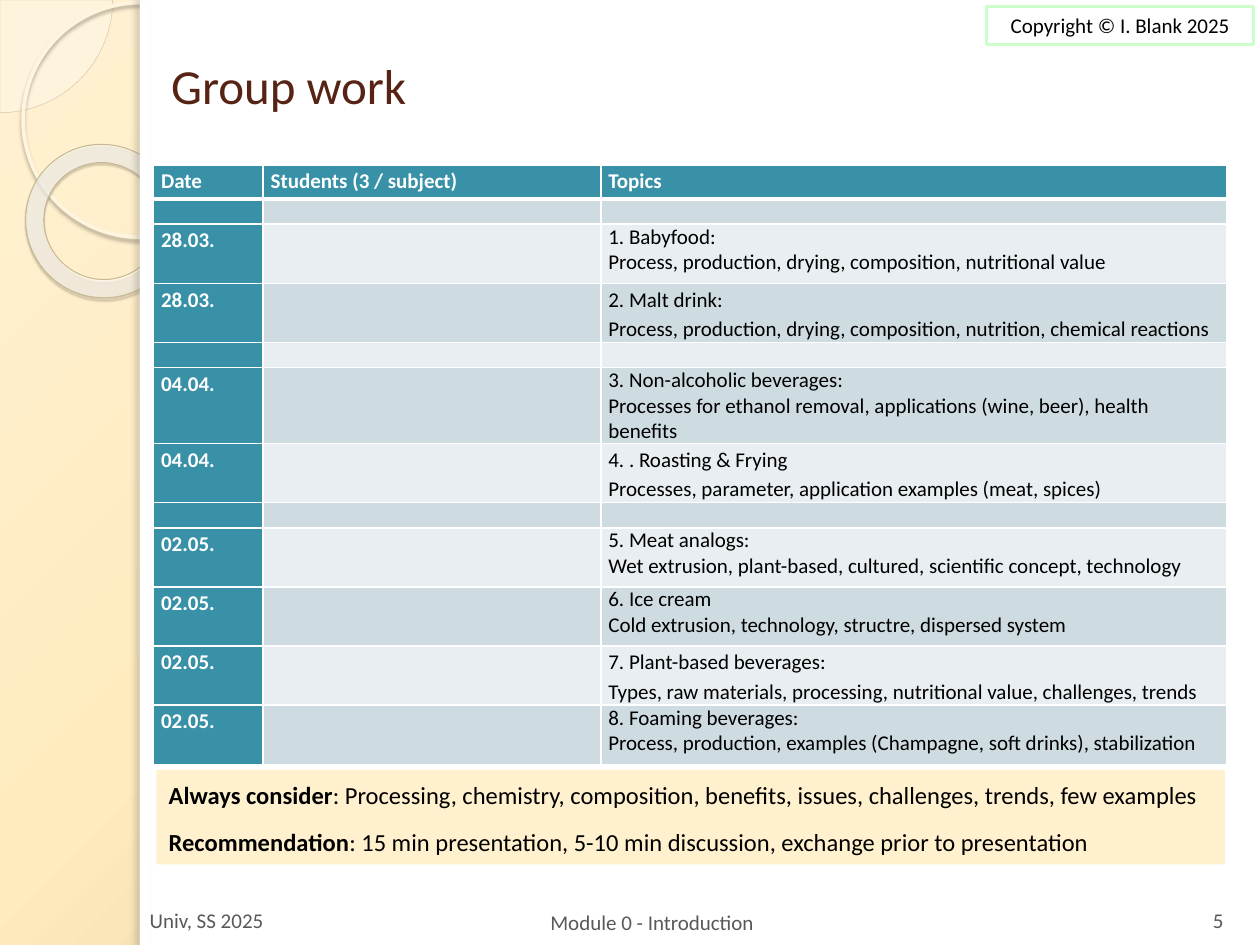
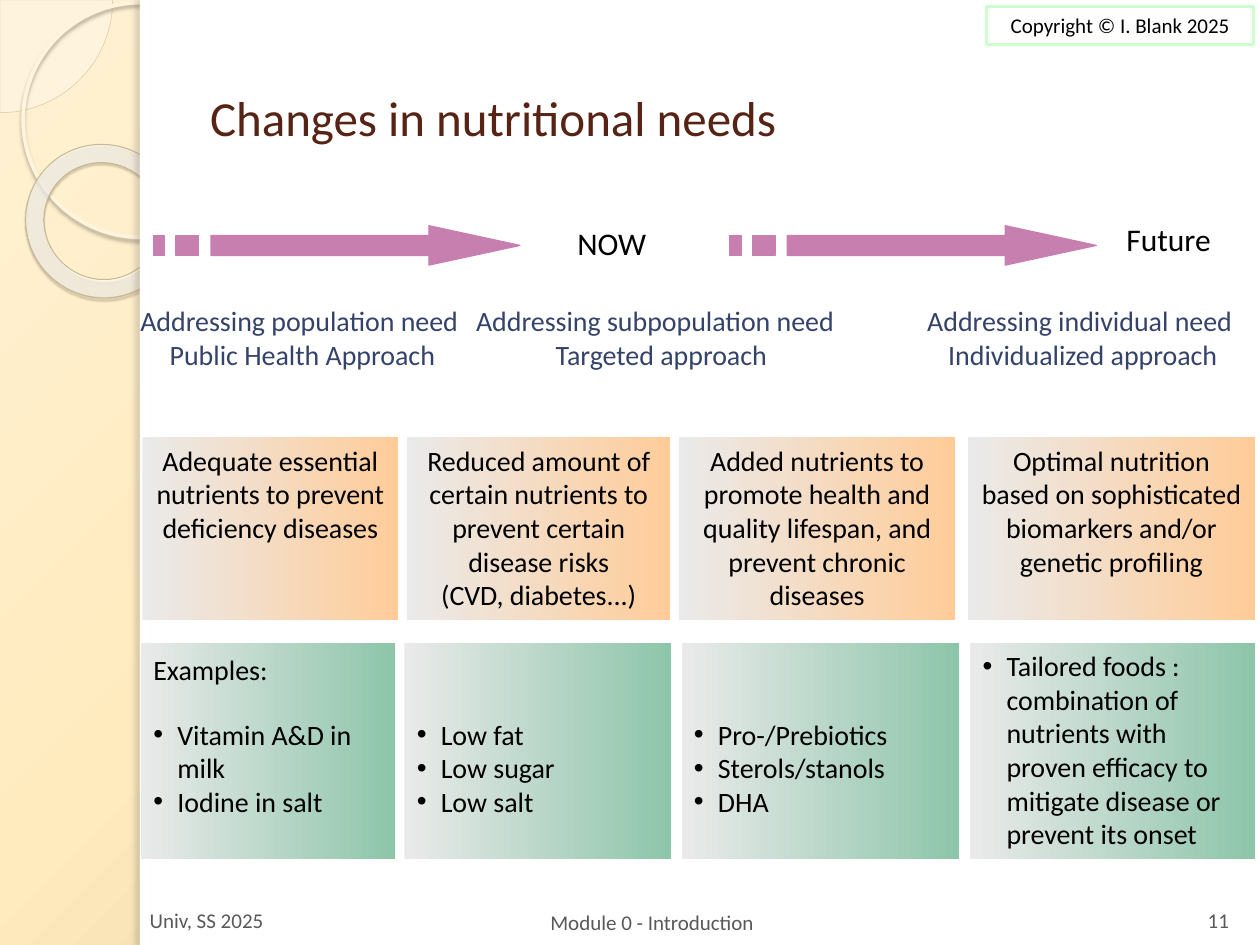
from lxml import etree
from pptx import Presentation
from pptx.dml.color import RGBColor
from pptx.enum.shapes import MSO_SHAPE as SHAPE
from pptx.enum.text import MSO_ANCHOR as ANCHOR, PP_ALIGN as ALIGN
from pptx.oxml.ns import qn
from pptx.util import Pt

FONT = "Calibri"
BLACK, WHITE, GREY = "000000", "FFFFFF", "595959"
TITLE_COLOR, APPROACH_COLOR, ARROW_COLOR = "572314", "35436A", "C77FAF"
TEAL, NOTE_FILL = "3891A7", "FFF1CE"
BANDS = ["CEDCE1", "E8EEF1"]
BACKGROUND = [(0, "FFF1D3", 100), (40, "FFEBBE", 100), (100, "C9B484", 100)]
RING = [(0, "FFFCF6", 70), (70, "FFFEFB", 55), (100, "F0D28E", 60)]
ORANGE = [(0, "EAEAEA", 100), (100, "FFCC99", 100)]
GREEN = [(0, "EAEAEA", 100), (100, "8DC5AA", 100)]

COPYRIGHT = "Copyright © I. Blank 2025"
TERM = "Univ, SS 2025"
MODULE = "Module 0 - Introduction"

HEADER = ("Date", "Students (3 / subject)", "Topics")
SINGLE, LOOSE = 1.0, 1.15
SCHEDULE = [
    None,
    ("28.03.", SINGLE, ["1. Babyfood:",
                        "Process, production, drying, composition, nutritional value"]),
    ("28.03.", LOOSE, ["2. Malt drink:",
                       "Process, production, drying, composition, nutrition, chemical reactions"]),
    None,
    ("04.04.", SINGLE, ["3. Non-alcoholic beverages:",
                        "Processes for ethanol removal, applications (wine, beer), health benefits"]),
    ("04.04.", LOOSE, ["4. . Roasting & Frying",
                       "Processes, parameter, application examples (meat, spices)"]),
    None,
    ("02.05.", SINGLE, ["5. Meat analogs:",
                        "Wet extrusion, plant-based, cultured, scientific concept, technology"]),
    ("02.05.", SINGLE, ["6. Ice cream",
                        "Cold extrusion, technology, structre, dispersed system"]),
    ("02.05.", LOOSE, ["7. Plant-based beverages:",
                       "Types, raw materials, processing, nutritional value, challenges, trends"]),
    ("02.05.", SINGLE, ["8. Foaming beverages:",
                        "Process, production, examples (Champagne, soft drinks), stabilization"]),
]
COL_WIDTHS = [62.6, 193, 357.8]
HEADER_H, GAP_H, TOPIC_H = 19.4, 12.2, 33.8
NOTES = [
    ("Always consider",
     ": Processing, chemistry, composition, benefits, issues, challenges, trends, few examples"),
    ("Recommendation",
     ": 15 min presentation, 5-10 min discussion, exchange prior to presentation"),
]

APPROACHES = [
    (70.6, 204.5, ["Addressing population need ", "Public Health Approach"]),
    (262.1, 228.2, ["Addressing subpopulation need ", " Targeted approach"]),
    (516.2, 201.6, ["Addressing individual need", " Individualized approach"]),
]
NEEDS = [
    (81.4, 146.2, ["Adequate essential nutrients to prevent deficiency diseases"]),
    (232.6, 150.5, ["Reduced amount of certain nutrients to prevent certain disease risks",
                    "(CVD, diabetes...)"]),
    (388.1, 157.7, ["Added nutrients to promote health and quality lifespan, "
                    "and prevent chronic diseases"]),
    (553, 164.2, ["Optimal nutrition based on sophisticated biomarkers and/or genetic profiling"]),
]
BELOW_HEADING = 42.6
EXAMPLES = [
    (80.6, 145.4, BELOW_HEADING, ["Vitamin A&D in milk", "Iodine in salt"]),
    (231.1, 152.6, BELOW_HEADING, ["Low fat", "Low sugar", "Low salt"]),
    (389.5, 158.4, BELOW_HEADING, ["Pro-/Prebiotics", "Sterols/stanols", "DHA"]),
    (554.4, 162.7, 3.6, ["Tailored foods : combination of nutrients with proven efficacy "
                         "to mitigate disease or prevent its onset"]),
]
STAGES = [("NOW", 288, 124.6, 123.1), ("Future", 615.6, 122.4, 104.4)]
ARROW_XS, ARROW_Y = [87.6, 416.9], 129
ARROW_PARTS = [
    [(157.5, 0), (157.5, 5.6), (33, 5.6), (33, 17), (157.5, 17), (157.5, 22.5), (209.5, 11.25)],
    [(13, 5.6), (13, 17), (26, 17), (26, 5.6)],
    [(0, 5.6), (0, 17), (6.5, 17), (6.5, 5.6)],
]


def rgb(color):
    return RGBColor.from_string(color)


def sub(parent, tag, **attrs):
    el = etree.SubElement(parent, qn(tag))
    for name, value in attrs.items():
        el.set(name, str(value))
    return el


def put_color(parent, color, alpha):
    clr = sub(parent, "a:srgbClr", val=color)
    if alpha < 100:
        sub(clr, "a:alpha", val=alpha * 1000)


def set_gradient(fill, owner, stops, focus=None):
    fill.solid()
    solid = next(owner.iter(qn("a:solidFill")))
    grad = etree.Element(qn("a:gradFill"), rotWithShape="1")
    gs_list = sub(grad, "a:gsLst")
    for pos, color, alpha in stops:
        put_color(sub(gs_list, "a:gs", pos=pos * 1000), color, alpha)
    if focus:
        sides = {side: value * 1000 for side, value in zip("ltrb", focus)}
        sub(sub(grad, "a:path", path="circle"), "a:fillToRect", **sides)
    else:
        sub(grad, "a:lin", ang=0, scaled=1)
    solid.getparent().replace(solid, grad)


def style(sp, fill=None, line=None, width=1, alpha=100):
    sp.shadow.inherit = False
    if line:
        sp.line.color.rgb = rgb(line)
        sp.line.width = Pt(width)
    else:
        sp.line.fill.background()
    if fill:
        sp.fill.solid()
        sp.fill.fore_color.rgb = rgb(fill)
        if alpha < 100:
            clr = sp._element.spPr.find(qn("a:solidFill"))[0]
            sub(clr, "a:alpha", val=alpha * 1000)
    else:
        sp.fill.background()


def add_shape(slide, box, kind=SHAPE.RECTANGLE, **look):
    sp = slide.shapes.add_shape(kind, *map(Pt, box))
    style(sp, **look)
    return sp


def add_shadow(sp, color, alpha, blur, dist, angle):
    effects = sp._element.spPr.find(qn("a:effectLst"))
    shadow = sub(effects, "a:outerShdw", blurRad=Pt(blur), dist=Pt(dist),
                 dir=angle * 60000, algn="tl", rotWithShape=0)
    put_color(shadow, color, alpha)


def write(tf, paras, size, color=BLACK, align=ALIGN.LEFT, anchor=ANCHOR.TOP,
          bold=False, spacing=None, after=None):
    tf.word_wrap = True
    tf.vertical_anchor = anchor
    fill_text(tf, paras, size, color, align, bold, spacing, after)


def fill_text(tf, paras, size, color, align=ALIGN.LEFT, bold=False, spacing=None, after=None):
    for i, para in enumerate(paras):
        p = tf.paragraphs[0] if i == 0 else tf.add_paragraph()
        p.alignment = align
        p.line_spacing = spacing
        if after:
            p.space_after = Pt(after)
        lead, rest = para if isinstance(para, tuple) else (None, para)
        for text, strong in ((lead, True), (rest, bold)):
            if text:
                r = p.add_run()
                r.text = text
                r.font.name, r.font.size, r.font.bold = FONT, Pt(size), strong
                r.font.color.rgb = rgb(color)
        if not rest:
            sub(p._p, "a:endParaRPr", sz=size * 100)


def add_text(slide, box, paras, size, **look):
    tb = slide.shapes.add_textbox(*map(Pt, box))
    write(tb.text_frame, paras, size, **look)


def add_frame(prs, title, title_box, number):
    slide = prs.slides.add_slide(prs.slide_layouts[6])
    set_gradient(slide.background.fill, slide.element, BACKGROUND, (-24, -20, 124, 120))

    pie = add_shape(slide, (-64.4, -64.4, 128.8, 128.8), SHAPE.PIE,
                    fill="FEFAF4", alpha=33, line="D3C39F", width=0.25)
    pie.adjustments[0], pie.adjustments[1] = 0, 54.02
    circle = add_shape(slide, (13.2, 1.5, 134, 134), SHAPE.OVAL, line="FFF5DE", width=2.15)
    add_shadow(circle, "B0A68F", 85, 2, 2, 90)
    donut = add_shape(slide, (14.4, 82.8, 88.6, 87.1), SHAPE.DONUT, line="C7B893", width=0.58)
    donut.adjustments[0] = 0.12
    donut.rotation = 38.6
    set_gradient(donut.fill, donut._element.spPr, RING, (-408, -50, 508, 150))
    add_shadow(donut, "5A5444", 35, 1, 1.2, 75)
    add_shape(slide, (80, 0, 640, 540), fill=WHITE)
    edge = add_shape(slide, (80, 0, 5.8, 540), fill=WHITE)
    add_shadow(edge, "736F63", 25, 3, 3, 180)

    badge = add_shape(slide, (563.8, 3.6, 152.6, 21.8), line="CCFFCC", width=2)
    write(badge.text_frame, [COPYRIGHT], 12, align=ALIGN.CENTER)
    add_text(slide, (78.5, 510.5, 167.8, 25.9), [TERM], 12, color=GREY, anchor=ANCHOR.BOTTOM)
    add_text(slide, (678.2, 510.5, 36, 25.9), [number], 12, color=GREY,
             align=ALIGN.CENTER, anchor=ANCHOR.BOTTOM)
    add_text(slide, (307.4, 514.1, 228.2, 25.9), [MODULE], 12, color=GREY, anchor=ANCHOR.MIDDLE)
    add_text(slide, title_box, [title], 28, color=TITLE_COLOR, anchor=ANCHOR.MIDDLE)
    return slide


def set_cell(cell, paras, fill, color, bold, spacing, after=None, bottom=1):
    cell.margin_left = cell.margin_right = Pt(4.3)
    cell.margin_top = cell.margin_bottom = 0
    cell.fill.solid()
    cell.fill.fore_color.rgb = rgb(fill)
    fill_text(cell.text_frame, paras, 12, color, bold=bold, spacing=spacing, after=after)
    tc_pr = cell._tc.get_or_add_tcPr()
    for i, (side, width) in enumerate(zip("LRTB", (1, 1, 1, bottom))):
        ln = etree.Element(qn("a:ln" + side), w=str(Pt(width)))
        put_color(sub(ln, "a:solidFill"), WHITE, 100)
        tc_pr.insert(i, ln)


def add_schedule(slide):
    heights = [HEADER_H] + [TOPIC_H if row else GAP_H for row in SCHEDULE]
    box = (87.8, 94.3, sum(COL_WIDTHS), sum(heights))
    table = slide.shapes.add_table(len(heights), len(COL_WIDTHS), *map(Pt, box)).table
    for col, width in zip(table.columns, COL_WIDTHS):
        col.width = Pt(width)
    for row, height in zip(table.rows, heights):
        row.height = Pt(height)
    for c, label in enumerate(HEADER):
        set_cell(table.cell(0, c), [label], TEAL, WHITE, True, LOOSE, 10, bottom=3)
    for n, entry in enumerate(SCHEDULE):
        date, spacing, topic = entry or ("", LOOSE, [""])
        band = BANDS[n % 2]
        set_cell(table.cell(n + 1, 0), [date], TEAL, WHITE, True, LOOSE, 10 if date else None)
        set_cell(table.cell(n + 1, 1), [""], band, BLACK, False, LOOSE)
        set_cell(table.cell(n + 1, 2), topic, band, BLACK, False, spacing)


def add_striped_arrow(slide, x, y):
    parts = [[(Pt(x + dx), Pt(y + dy)) for dx, dy in part] for part in ARROW_PARTS]
    builder = slide.shapes.build_freeform(*parts[0][0])
    for i, part in enumerate(parts):
        if i:
            builder.move_to(*part[0])
        builder.add_line_segments(part[1:], close=True)
    style(builder.convert_to_shape(), fill=ARROW_COLOR, line=ARROW_COLOR, width=0.75)


def add_card(slide, box, stops, paras, align=ALIGN.LEFT, top=3.6):
    sp = add_shape(slide, box)
    set_gradient(sp.fill, sp._element.spPr, stops)
    sp.text_frame.margin_top = Pt(top)
    write(sp.text_frame, paras, 16, align=align)
    return sp


def add_bullets(tf):
    for p in tf.paragraphs:
        p_pr = p._p.get_or_add_pPr()
        p_pr.set("marL", str(Pt(13.7)))
        p_pr.set("indent", str(-Pt(13.7)))
        sub(p_pr, "a:buFont", typeface="Arial")
        sub(p_pr, "a:buChar", char="•")


def build_group_work(prs):
    slide = add_frame(prs, "Group work", (90.7, 14.4, 613.4, 68.4), "5")
    add_schedule(slide)
    note = add_shape(slide, (89.3, 439.9, 610.6, 54), fill=NOTE_FILL)
    write(note.text_frame, NOTES, 14, spacing=LOOSE, after=10)
    note.text_frame.paragraphs[-1].line_spacing = SINGLE


def build_nutritional_needs(prs):
    slide = add_frame(prs, "Changes in nutritional needs", (113, 21.6, 607, 90), "11")
    for x in ARROW_XS:
        add_striped_arrow(slide, x, ARROW_Y)
    for stage, x, y, w in STAGES:
        add_text(slide, (x, y, w, 36), [stage], 18, align=ALIGN.CENTER)
    for x, w, lines in APPROACHES:
        add_text(slide, (x, 169.9, w, 68.4), lines, 16, color=APPROACH_COLOR, align=ALIGN.CENTER)
    for x, w, need in NEEDS:
        add_card(slide, (x, 249.8, w, 104.4), ORANGE, need, ALIGN.CENTER)
    for x, w, top, items in EXAMPLES:
        add_bullets(add_card(slide, (x, 367.2, w, 123.8), GREEN, items, top=top).text_frame)
    add_text(slide, (80.6, 369.4, 122.4, 26.6), ["Examples:"], 16)


def main():
    prs = Presentation()
    prs.slide_width, prs.slide_height = Pt(720), Pt(540)
    build_group_work(prs)
    build_nutritional_needs(prs)
    prs.save("out.pptx")


if __name__ == "__main__":
    main()
